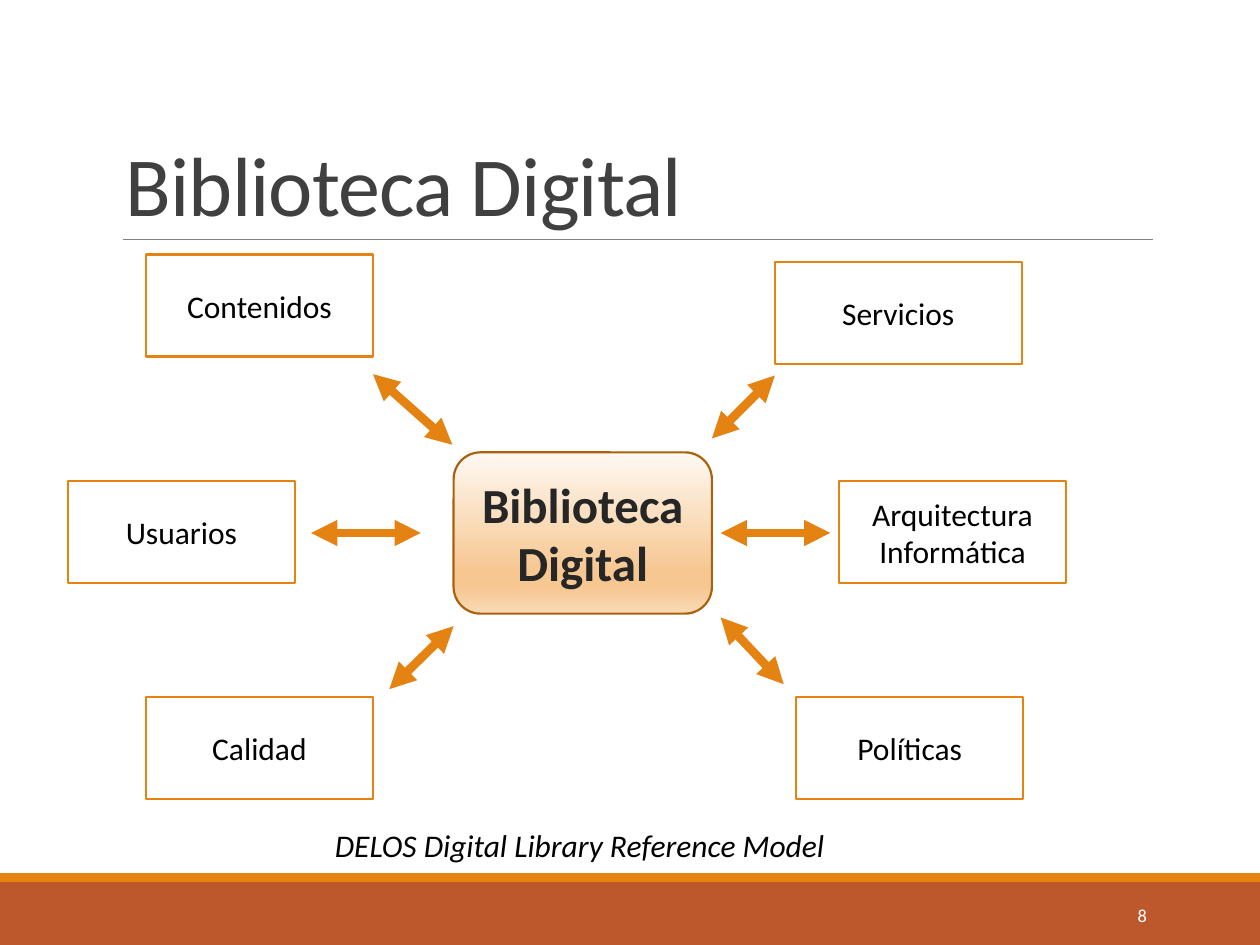
from lxml.etree import SubElement
from pptx import Presentation
from pptx.dml.color import RGBColor
from pptx.enum.shapes import MSO_CONNECTOR, MSO_SHAPE
from pptx.enum.text import MSO_ANCHOR, PP_ALIGN
from pptx.oxml.ns import qn
from pptx.util import Inches, Pt

WIDTH, HEIGHT = 10, 7.5
ORANGE, RUST, BLACK, WHITE = "E48312", "BD582C", "000000", "FFFFFF"

TITLE = "Biblioteca Digital"
CAPTION = "DELOS Digital Library Reference Model"
PAGE = "8"
HUB_BOX = (3.6, 3.59, 2.05, 1.28)
HUB_GRADIENT = [(0, "FEF9F3"), (74, "F6C791"), (83, "F6C791"), (100, "F9DAB6")]

TOP, MIDDLE, BOTTOM = 2.02, 3.82, 5.53
TOPIC_WIDTH, TOPIC_HEIGHT = 1.8, 0.81
# lines of text, left, top, width
TOPICS = [
    (["Contenidos"], 1.16, TOP, TOPIC_WIDTH),
    (["Usuarios"], 0.54, MIDDLE, TOPIC_WIDTH),
    (["Servicios"], 6.15, TOP + 0.06, 1.96),
    (["Calidad"], 1.16, BOTTOM, TOPIC_WIDTH),
    (["Políticas"], 6.32, BOTTOM, TOPIC_WIDTH),
    (["Arquitectura", "Informática"], 6.66, MIDDLE, TOPIC_WIDTH),
]
AXIS = HUB_BOX[1] + HUB_BOX[3] / 2
ARROWS = [
    ((6.15, 2.98), (5.65, 3.48)),
    ((3.6, 4.97), (3.09, 5.47)),
    ((3.59, 3.53), (2.96, 2.97)),
    ((3.34, AXIS), (2.47, AXIS)),
    ((6.59, AXIS), (5.72, AXIS)),
    ((6.22, 5.43), (5.72, 4.9)),
]


def color(value):
    return RGBColor.from_string(value)


def inches(values):
    return [Inches(value) for value in values]


def write(shape, lines, size, ink, align=PP_ALIGN.CENTER,
          anchor=MSO_ANCHOR.MIDDLE, bold=False, italic=False, wrap=True):
    """Fill a shape with one paragraph per line and return its text frame."""
    frame = shape.text_frame
    frame.text = "\n".join(lines)
    frame.word_wrap = wrap
    frame.vertical_anchor = anchor
    for paragraph in frame.paragraphs:
        paragraph.alignment = align
        font = paragraph.font
        font.name, font.size = "Calibri", Pt(size)
        font.bold, font.italic = bold, italic
        font.color.rgb = color(ink)
    return frame


def add_box(slide, box, fill=None, line=None, kind=MSO_SHAPE.RECTANGLE):
    shape = slide.shapes.add_shape(kind, *inches(box))
    shape.shadow.inherit = False
    if fill:
        shape.fill.solid()
        shape.fill.fore_color.rgb = color(fill)
    if line:
        shape.line.color.rgb = color(line)
        shape.line.width = Pt(1.25)
    else:
        shape.line.fill.background()
    return shape


def add_line(slide, start, end, ink, width, arrows=False):
    connector = slide.shapes.add_connector(
        MSO_CONNECTOR.STRAIGHT, *inches(start + end))
    connector.line.color.rgb = color(ink)
    connector.line.width = Pt(width)
    if arrows:
        outline = connector.line._get_or_add_ln()
        for tip in ("a:headEnd", "a:tailEnd"):
            SubElement(outline, qn(tip), type="triangle")
    SubElement(connector._element.spPr, qn("a:effectLst"))


def shade(shape, stops):
    """Give the shape a top-to-bottom gradient with any number of stops."""
    shape.fill.gradient()
    shape.fill.gradient_angle = 270
    stop_list = shape._element.spPr.find(".//" + qn("a:gsLst"))
    for stop in list(stop_list):
        stop_list.remove(stop)
    for position, value in stops:
        stop = SubElement(stop_list, qn("a:gs"), pos=str(position * 1000))
        SubElement(stop, qn("a:srgbClr"), val=value)


def add_frame(slide):
    """Footer bands, title with its rule, and page number."""
    add_box(slide, (0, 7, WIDTH, 0.5), RUST)
    add_box(slide, (0, 6.93, WIDTH, 0.07), ORANGE)
    add_line(slide, (0.98, 1.9), (9.15, 1.9), "808080", 0.5)

    title = slide.shapes.add_textbox(*inches((0.9, 0.31, 8.25, 1.59)))
    heading = write(title, [TITLE], 48, "404040", PP_ALIGN.LEFT,
                    MSO_ANCHOR.BOTTOM).paragraphs[0]
    heading.line_spacing = 0.85
    heading.runs[0].font._element.set("spc", "-50")

    page = slide.shapes.add_textbox(*inches((8.12, 7.06, 1.08, 0.4)))
    write(page, [PAGE], 10.5, WHITE, PP_ALIGN.RIGHT)


def add_diagram(slide):
    hub = add_box(slide, HUB_BOX, line="A9610D",
                  kind=MSO_SHAPE.ROUNDED_RECTANGLE)
    shade(hub, HUB_GRADIENT)
    write(hub, [TITLE], 28, "262626", bold=True)

    for lines, left, top, width in TOPICS:
        topic = add_box(slide, (left, top, width, TOPIC_HEIGHT), WHITE, ORANGE)
        write(topic, lines, 18, BLACK)

    for start, end in ARROWS:
        add_line(slide, start, end, ORANGE, 5, arrows=True)

    caption = slide.shapes.add_textbox(*inches((2.56, 6.51, 4.13, 0.4)))
    write(caption, [CAPTION], 18, BLACK, PP_ALIGN.LEFT, MSO_ANCHOR.TOP,
          italic=True, wrap=False)


def main():
    deck = Presentation()
    deck.slide_width, deck.slide_height = inches((WIDTH, HEIGHT))
    slide = deck.slides.add_slide(deck.slide_layouts[6])
    add_frame(slide)
    add_diagram(slide)
    deck.save("out.pptx")


if __name__ == "__main__":
    main()
